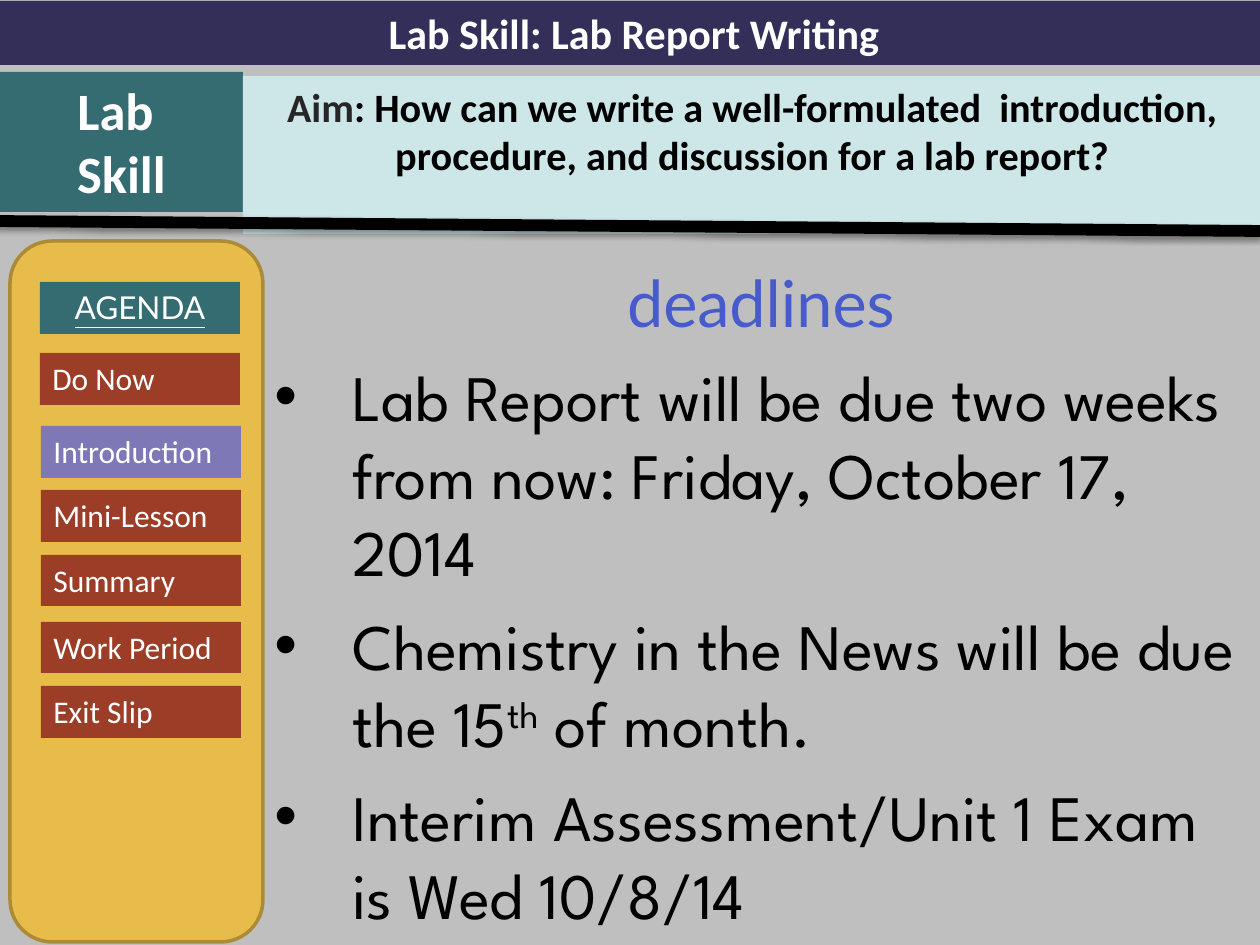
from dataclasses import dataclass

from lxml import etree
from pptx import Presentation
from pptx.dml.color import RGBColor
from pptx.enum.shapes import MSO_CONNECTOR, MSO_SHAPE
from pptx.enum.text import MSO_ANCHOR, PP_ALIGN
from pptx.oxml import parse_xml
from pptx.oxml.ns import nsdecls, qn
from pptx.util import Pt

RECT, ROUND = MSO_SHAPE.RECTANGLE, MSO_SHAPE.ROUNDED_RECTANGLE
STRAIGHT = MSO_CONNECTOR.STRAIGHT
LEFT, CENTER, TOP = PP_ALIGN.LEFT, PP_ALIGN.CENTER, MSO_ANCHOR.TOP
PX = 914400 / 126


@dataclass(frozen=True)
class Theme:
    background: str = "BFBFBF"
    navy: str = "342F59"
    teal: str = "346C71"
    pale: str = "CDE6E8"
    gold: str = "E8BC4A"
    gold_edge: str = "AC8B37"
    rust: str = "9C3D28"
    violet: str = "7E78B7"
    blue: str = "475BCD"
    gray: str = "262626"
    white: str = "FFFFFF"
    black: str = "000000"
    banner_size: int = 24
    label_size: int = 30
    aim_size: int = 23
    agenda_size: int = 18
    body_size: int = 37
    body_gap: int = 9


@dataclass(frozen=True)
class Run:
    text: str
    size: int
    color: str
    font: str = "Calibri"
    bold: bool = False
    underline: bool = False
    baseline: int = 0


@dataclass(frozen=True)
class Box:
    x: int
    y: int
    w: int
    h: int
    fill: str
    paragraphs: tuple[tuple[Run, ...], ...] = ()
    align: int = CENTER
    kind: int = RECT
    edge: str = ""


T = Theme()


def px(n: int) -> int:
    return round(n * PX)


def rgb(value: str) -> RGBColor:
    return RGBColor.from_string(value)


def add_runs(p, runs: tuple[Run, ...], align: int) -> None:
    p.alignment = align
    for run in runs:
        r = p.add_run()
        r.text = run.text
        formats = {"name": run.font, "size": Pt(run.size),
                   "bold": run.bold, "underline": run.underline}
        for key, value in formats.items():
            setattr(r.font, key, value)
        r.font.color.rgb = rgb(run.color)
        if run.baseline:
            r.font._element.set("baseline", str(run.baseline * 1000))


def next_paragraph(tf, index: int):
    return tf.add_paragraph() if index else tf.paragraphs[0]


def add_box(s, box: Box) -> None:
    sp = s.shapes.add_shape(box.kind, px(box.x), px(box.y), px(box.w), px(box.h))
    sp.shadow.inherit = False
    sp.fill.solid()
    sp.fill.fore_color.rgb = rgb(box.fill)
    if box.edge:
        sp.line.color.rgb = rgb(box.edge)
        sp.line.width = Pt(2)
    else:
        sp.line.fill.background()
    tf = sp.text_frame
    tf.word_wrap, tf.vertical_anchor = True, TOP
    for i, runs in enumerate(box.paragraphs):
        add_runs(next_paragraph(tf, i), runs, box.align)


def add_divider(s) -> None:
    line = s.shapes.add_connector(STRAIGHT, px(-6), px(221), px(1260), px(231))
    line.line.color.rgb = rgb(T.black)
    line.line.width = Pt(6.75)
    line._element.spPr.append(parse_xml(
        f'<a:effectLst {nsdecls("a")}>'
        '<a:outerShdw blurRad="39400" dist="20300" dir="5400000" rotWithShape="0">'
        f'<a:srgbClr val="{T.black}"><a:alpha val="38000"/></a:srgbClr>'
        '</a:outerShdw></a:effectLst>'))


def add_bullet(p, indent: int) -> None:
    pPr = p._p.get_or_add_pPr()
    pPr.set("marL", str(px(indent)))
    pPr.set("indent", str(-px(indent)))
    etree.SubElement(pPr, qn("a:buFont")).set("typeface", "Arial")
    etree.SubElement(pPr, qn("a:buChar")).set("char", "•")


def add_deadlines(s, title: Run, items: tuple[tuple[Run, ...], ...]) -> None:
    tf = s.shapes.add_textbox(px(262), px(257), px(998), px(688)).text_frame
    tf.word_wrap = True
    for i, runs in enumerate(((title,), *items)):
        p = next_paragraph(tf, i)
        add_runs(p, runs, LEFT if i else CENTER)
        p.space_before = Pt(T.body_gap)
        if i:
            add_bullet(p, 78)


def label(text: str) -> Run:
    return Run(text, T.label_size, T.white, bold=True)


def body(text: str, baseline: int = 0) -> Run:
    return Run(text, T.body_size, T.black, "League Spartan", baseline=baseline)


def agenda_item(x: int, y: int, h: int, text: str, fill: str = T.rust) -> Box:
    return Box(x, y, 200, h, fill, ((Run(text, T.agenda_size, T.white),),), LEFT)


HEADER = (
    Box(0, 1, 1268, 64, T.navy,
        ((Run("Lab Skill: Lab Report Writing", T.banner_size, T.white, bold=True),),)),
    Box(0, 72, 243, 140, T.teal, ((label("Lab "),), (label("Skill"),))),
    Box(243, 76, 1020, 158, T.pale, ((
        Run("Aim", T.aim_size, T.gray, bold=True),
        Run(": How can we write a well-formulated  introduction, procedure, "
            "and discussion for a lab report?", T.aim_size, T.black, bold=True)),)),
)
AGENDA = (
    Box(10, 241, 253, 701, T.gold, kind=ROUND, edge=T.gold_edge),
    Box(40, 282, 200, 52, T.teal,
        ((Run("AGENDA", T.agenda_size, T.white, "Lato", underline=True),),)),
    agenda_item(40, 353, 52, "Do Now"),
    agenda_item(41, 426, 52, "Introduction", T.violet),
    agenda_item(41, 490, 52, "Mini-Lesson"),
    agenda_item(41, 555, 51, "Summary"),
    agenda_item(41, 622, 51, "Work Period"),
    agenda_item(41, 686, 52, "Exit Slip"),
)
DEADLINES = (
    (body("Lab Report will be due two weeks from now: Friday, October 17, 2014"),),
    (body("Chemistry in the News will be due the 15"), body("th", 30),
     body(" of month.")),
    (body("Interim Assessment/Unit 1 Exam is Wed 10/8/14"),),
)


def main() -> None:
    prs = Presentation()
    prs.slide_width, prs.slide_height = px(1260), px(945)
    s = prs.slides.add_slide(prs.slide_layouts[6])
    s.background.fill.solid()
    s.background.fill.fore_color.rgb = rgb(T.background)

    # Deadlines list
    add_deadlines(s, Run("deadlines", T.body_size, T.blue, "Lato"), DEADLINES)

    # Header bands and divider
    for box in HEADER:
        add_box(s, box)
    add_divider(s)

    # Agenda panel
    for box in AGENDA:
        add_box(s, box)

    prs.save("out.pptx")


if __name__ == "__main__":
    main()
